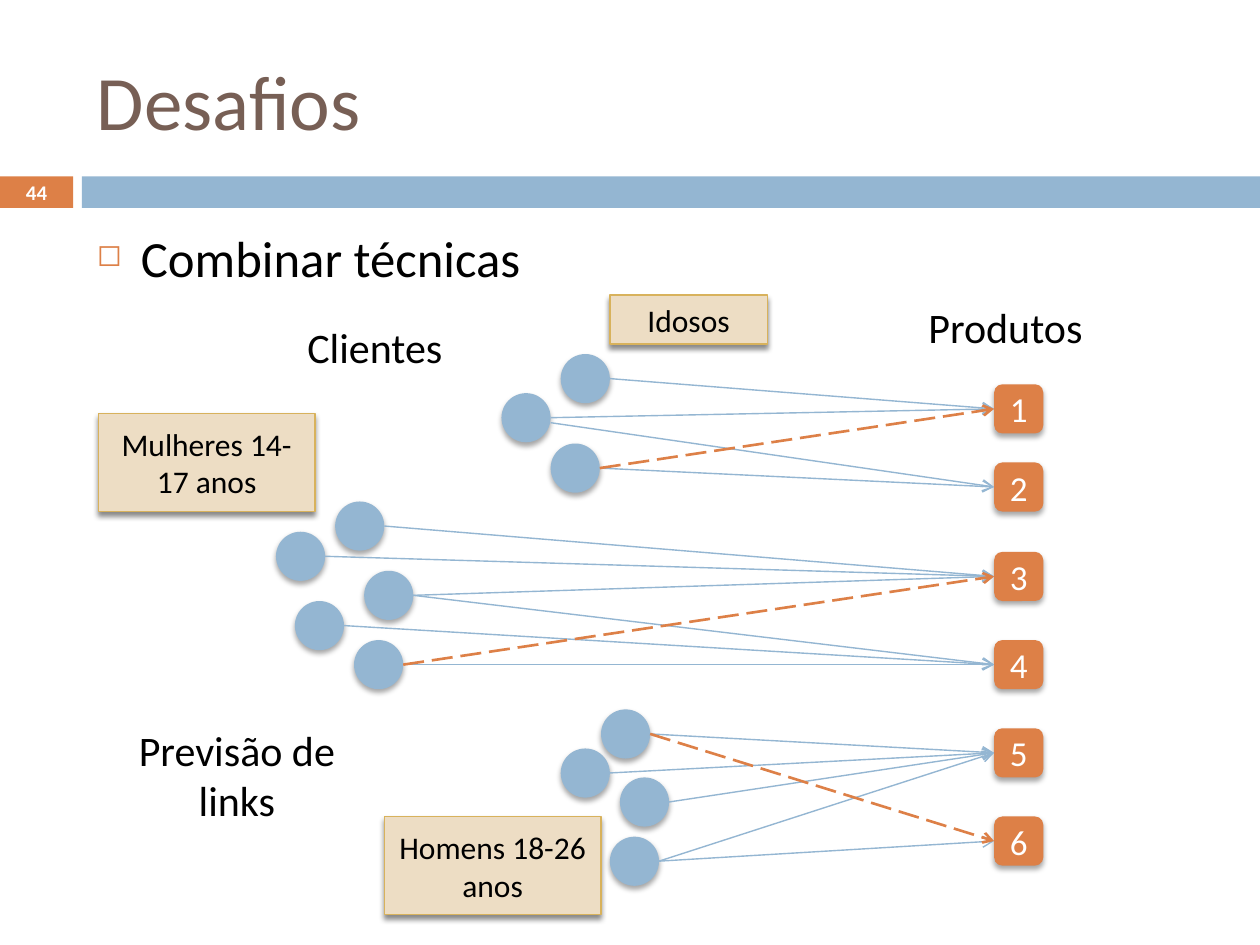
from lxml import etree
from pptx import Presentation
from pptx.dml.color import RGBColor
from pptx.enum.dml import MSO_LINE
from pptx.enum.shapes import MSO_CONNECTOR, MSO_SHAPE
from pptx.enum.text import MSO_ANCHOR, PP_ALIGN
from pptx.oxml.ns import qn
from pptx.util import Inches, Pt

RECT, ROUND, OVAL = MSO_SHAPE.RECTANGLE, MSO_SHAPE.ROUNDED_RECTANGLE, MSO_SHAPE.OVAL
LEFT, CENTER = PP_ALIGN.LEFT, PP_ALIGN.CENTER
TOP, MIDDLE = MSO_ANCHOR.TOP, MSO_ANCHOR.MIDDLE
STRAIGHT, DASH = MSO_CONNECTOR.STRAIGHT, MSO_LINE.LONG_DASH

BLUE = RGBColor(0x94, 0xB6, 0xD2)
ORANGE = RGBColor(0xDD, 0x80, 0x47)
BROWN = RGBColor(0x77, 0x5F, 0x55)
SAND = RGBColor(0xED, 0xDD, 0xC4)
GOLD = RGBColor(0xD8, 0xB2, 0x5C)
BLACK = RGBColor(0, 0, 0)
WHITE = RGBColor(255, 255, 255)

NODE = 0.39  # side of each client and product mark


def add(parent, tag, **attrs):
    return etree.SubElement(parent, qn(tag), attrs)


class Deck:
    font = "Calibri"

    def __init__(self, slide):
        self.slide = slide

    def label(self, shape, text, size, color, align=CENTER, anchor=MIDDLE, bold=False):
        frame = shape.text_frame
        for key, value in {"word_wrap": True, "vertical_anchor": anchor}.items():
            setattr(frame, key, value)
        para = frame.paragraphs[0]
        para.alignment = align
        run = para.add_run()
        run.text = text
        form = {"name": self.font, "size": Pt(size), "bold": bold}
        for key, value in form.items():
            setattr(run.font, key, value)
        run.font.color.rgb = color
        return para

    def text(self, box, text, size, color=BLACK, **form):
        shape = self.slide.shapes.add_textbox(*map(Inches, box))
        return self.label(shape, text, size, color, **form)

    def bullet(self, box, text, size):
        para = self.text(box, text, size, align=LEFT, anchor=TOP)
        para.space_before = Pt(7)
        props = para._p.get_or_add_pPr()
        props.set("marL", str(Inches(0.35)))
        props.set("indent", str(-Inches(0.35)))
        add(add(props, "a:buClr"), "a:srgbClr", val=str(ORANGE))
        add(props, "a:buSzPct", val="60000")
        add(props, "a:buChar", char="◻")

    def shape(self, kind, box, fill, edge=None, shade=0, drop=2):
        shape = self.slide.shapes.add_shape(kind, *map(Inches, box))
        shape.fill.solid()
        shape.fill.fore_color.rgb = fill
        if edge is None:
            shape.line.fill.background()
        else:
            shape.line.color.rgb = edge
            shape.line.width = Pt(0.79)
        shape.shadow.inherit = False
        if shade:
            effects = shape._element.spPr.find(qn("a:effectLst"))
            outer = add(effects, "a:outerShdw", blurRad=str(Pt(3)), dist=str(Pt(drop)),
                        dir="5400000", rotWithShape="0")
            tint = add(outer, "a:srgbClr", val=str(BLACK))
            add(tint, "a:alpha", val=str(shade * 1000))
        return shape

    def group(self, box, text):
        shape = self.shape(RECT, box, SAND, GOLD, shade=45, drop=2.4)
        self.label(shape, text, 18, BLACK)

    def client(self, x, y):
        self.shape(OVAL, (x, y, NODE, NODE), BLUE, shade=35)

    def product(self, x, y, text):
        shape = self.shape(ROUND, (x, y, NODE, NODE), ORANGE, shade=35)
        self.label(shape, text, 20, WHITE)

    def arrow(self, start, end, color=BLUE, width=0.79, dash=None):
        link = self.slide.shapes.add_connector(STRAIGHT, *map(Inches, start + end))
        link.line.color.rgb = color
        for key, value in {"width": Pt(width), "dash_style": dash}.items():
            setattr(link.line, key, value)
        props = link._element.spPr
        add(props.find(qn("a:ln")), "a:tailEnd", type="arrow")
        add(props, "a:effectLst")


# Clients by age group, and the top of each product
CLIENTS = {
    "e1": (4.45, 2.81), "e2": (3.98, 3.12), "e3": (4.37, 3.52),
    "w1": (2.66, 3.98), "w2": (2.19, 4.22), "w3": (2.89, 4.53),
    "w4": (2.34, 4.77), "w5": (2.81, 5.08),
    "m1": (4.77, 5.63), "m2": (4.45, 5.94), "m3": (4.92, 6.17), "m4": (4.84, 6.64),
}
GOODS_X = 7.89
GOODS = {1: 3.05, 2: 3.67, 3: 4.38, 4: 5.08, 5: 5.78, 6: 6.48}

# Known links, and links to predict
KNOWN = [("e1", 1), ("e3", 2), ("e2", 1), ("e2", 2), ("w1", 3), ("w3", 3),
         ("w2", 3), ("w5", 4), ("w4", 4), ("w3", 4), ("m1", 5), ("m3", 5),
         ("m2", 5), ("m4", 5), ("m4", 6)]
GUESSED = [("e3", 1), ("w5", 3), ("m1", 6)]
SHIFT = {("e2", 2): 0.04}  # keeps two links from one client apart


def ends(link):
    name, item = link
    x, y = CLIENTS[name]
    start = (x + NODE, y + NODE / 2 + SHIFT.get(link, 0))
    return start, (GOODS_X, GOODS[item] + NODE / 2)


def main():
    prs = Presentation()
    prs.slide_width, prs.slide_height = Inches(10), Inches(7.5)
    deck = Deck(prs.slides.add_slide(prs.slide_layouts[6]))

    # Header band, page number and title
    deck.shape(RECT, (0, 1.4, 0.58, 0.25), ORANGE)
    deck.shape(RECT, (0.65, 1.4, 9.35, 0.25), BLUE)
    deck.text((0, 1.39, 0.58, 0.27), "44", 11.9, WHITE, bold=True)
    deck.text((0.67, 0.25, 8.92, 1.08), "Desafios", 44, BROWN, align=LEFT)
    deck.bullet((0.67, 1.75, 8.92, 4.92), "Combinar técnicas", 29)

    # Clients and products
    for x, y in CLIENTS.values():
        deck.client(x, y)
    for item, y in GOODS.items():
        deck.product(GOODS_X, y, str(item))

    # Captions
    deck.text((2.34, 2.5, 1.72, 0.51), "Clientes", 24, align=LEFT, anchor=TOP)
    deck.text((7.27, 2.34, 1.8, 0.51), "Produtos", 24, align=LEFT, anchor=TOP)
    deck.text((0.94, 5.7, 1.88, 0.91), "Previsão de links", 24, anchor=TOP)

    # Links and group labels
    for link in KNOWN:
        deck.arrow(*ends(link))
    deck.group((4.84, 2.34, 1.25, 0.39), "Idosos")
    deck.group((3.05, 6.48, 1.72, 0.78), "Homens 18-26 anos")
    deck.group((0.78, 3.28, 1.72, 0.78), "Mulheres 14-17 anos")
    for link in GUESSED:
        deck.arrow(*ends(link), color=ORANGE, width=1.5, dash=DASH)

    prs.save("out.pptx")


if __name__ == "__main__":
    main()
